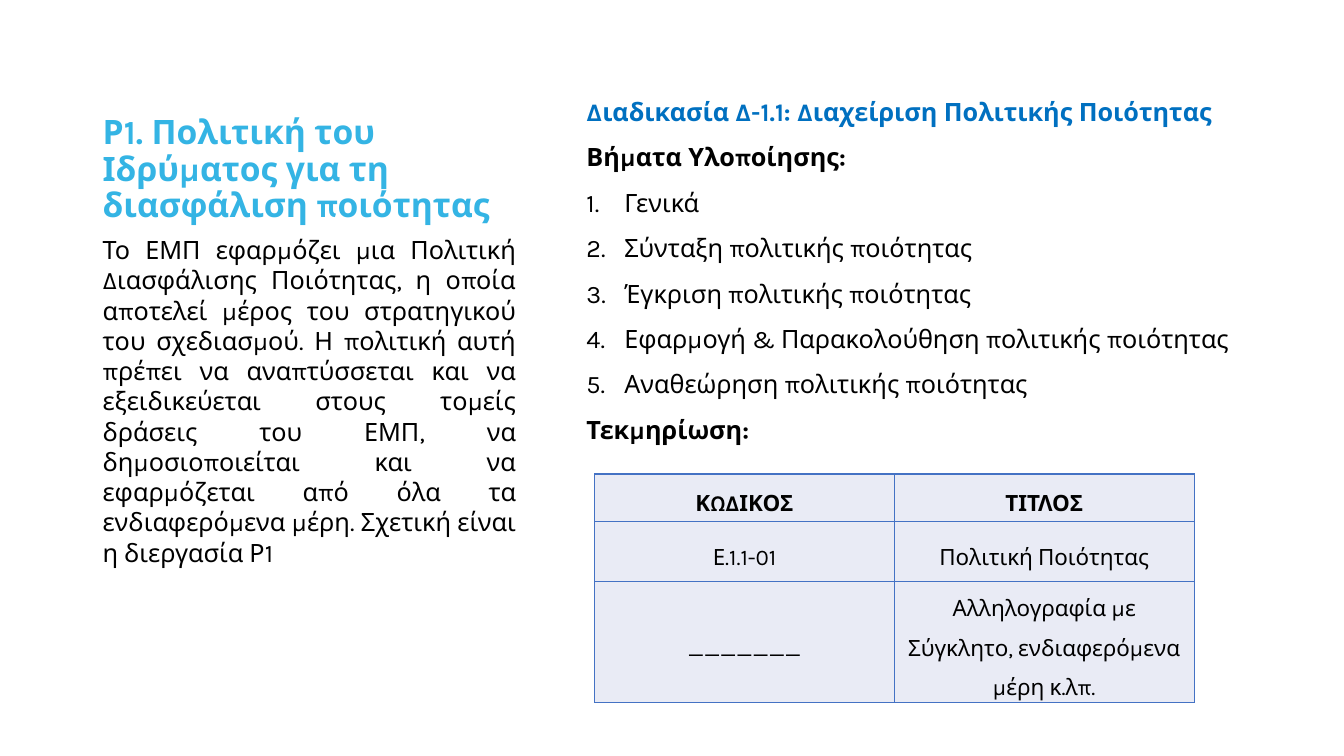
from dataclasses import dataclass
from pptx import Presentation
from pptx.dml.color import RGBColor as RGB
from pptx.enum.text import MSO_ANCHOR as Anchor, PP_ALIGN as Align
from pptx.oxml.ns import qn
from pptx.util import Inches, Pt
from lxml.etree import SubElement as Sub

WIDE, HIGH = 13.33, 7.5


@dataclass(frozen=True)
class Theme:
    font: str = "Karla"
    sky: str = "34B4E4"
    blue: str = "0070C0"
    ink: str = "000000"
    cell: str = "E9EBF5"
    rule: str = "4472C4"
    head: int = 24
    text: int = 18
    small: int = 16
    loose: float = 1.5


LOOK = Theme()

TITLE = "Ρ1. Πολιτική του Ιδρύματος για τη διασφάλιση ποιότητας"
POLICY = (
    "Το ΕΜΠ εφαρμόζει μια Πολιτική Διασφάλισης Ποιότητας, η οποία αποτελεί "
    "μέρος του στρατηγικού του σχεδιασμού. Η πολιτική αυτή πρέπει να "
    "αναπτύσσεται και να εξειδικεύεται στους τομείς δράσεις του ΕΜΠ, να "
    "δημοσιοποιείται και να εφαρμόζεται από όλα τα ενδιαφερόμενα μέρη. "
    "Σχετική είναι η διεργασία Ρ1"
)
PROCESS = "Διαδικασία Δ-1.1: Διαχείριση Πολιτικής Ποιότητας"
STEPS = [
    "Γενικά",
    "Σύνταξη πολιτικής ποιότητας",
    "Έγκριση πολιτικής ποιότητας",
    "Εφαρμογή & Παρακολούθηση πολιτικής ποιότητας",
    "Αναθεώρηση πολιτικής ποιότητας",
]
RECORDS = [
    ("ΚΩΔΙΚΟΣ", "ΤΙΤΛΟΣ"),
    ("Ε.1.1-01", "Πολιτική Ποιότητας"),
    ("_______", "Αλληλογραφία με Σύγκλητο, ενδιαφερόμενα μέρη κ.λπ."),
]


def frame(slide, box, anchor=Anchor.TOP):
    """Add a wrapping text box and return its text frame."""
    area = slide.shapes.add_textbox(*map(Inches, box)).text_frame
    area.word_wrap = True
    area.vertical_anchor = anchor
    return area


def write(para, text, size, color=LOOK.ink, bold=False, align=Align.LEFT, lead=1.0):
    para.alignment = align
    para.line_spacing = lead
    run = para.add_run()
    run.text = text
    font = run.font
    font.name, font.size, font.bold = LOOK.font, Pt(size), bold
    font.color.rgb = RGB.from_string(color)
    for tag in ("a:ea", "a:cs"):
        Sub(run._r.get_or_add_rPr(), qn(tag), typeface=LOOK.font)


def number(para, indent=0.375):
    props = para._p.get_or_add_pPr()
    props.set("marL", str(Inches(indent)))
    props.set("indent", str(-Inches(indent)))
    Sub(props, qn("a:buFont"), typeface="+mj-lt")
    Sub(props, qn("a:buAutoNum"), type="arabicPeriod")


def border(cell):
    props = cell._tc.get_or_add_tcPr()
    for spot, side in enumerate(("a:lnL", "a:lnR", "a:lnT", "a:lnB")):
        line = props.makeelement(qn(side), {"w": str(Pt(1))})
        props.insert(spot, line)
        Sub(Sub(line, qn("a:solidFill")), qn("a:srgbClr"), val=LOOK.rule)


def policy(slide, box):
    """Place the heading above the policy statement."""
    left, top, wide, high = box
    split = high * 0.3
    head = frame(slide, (left, top, wide, split), Anchor.BOTTOM)
    write(head.paragraphs[0], TITLE, LOOK.head, LOOK.sky, bold=True, lead=0.9)
    body = frame(slide, (left, top + split, wide, high - split))
    write(body.paragraphs[0], POLICY, LOOK.text, align=Align.JUSTIFY)


def process(slide, box):
    """List the process name, its numbered steps and the records label."""
    area = frame(slide, box)
    lines = [(PROCESS, LOOK.blue, True), ("Βήματα Υλοποίησης:", LOOK.ink, True)]
    lines += [(step, LOOK.ink, False) for step in STEPS]
    lines.append(("Τεκμηρίωση:", LOOK.ink, True))
    for spot, (text, color, bold) in enumerate(lines):
        para = area.add_paragraph() if spot else area.paragraphs[0]
        if text in STEPS:
            number(para)
        write(para, text, LOOK.text, color, bold, lead=LOOK.loose)


def records(slide, box, highs=(0.47, 0.6, 0.74)):
    shape = slide.shapes.add_table(len(RECORDS), len(RECORDS[0]), *map(Inches, box))
    table = shape.table
    for row, high, texts in zip(table.rows, highs, RECORDS):
        row.height = Inches(high)
        for cell, text in zip(row.cells, texts):
            cell.fill.solid()
            cell.fill.fore_color.rgb = RGB.from_string(LOOK.cell)
            cell.vertical_anchor = Anchor.MIDDLE
            cell.margin_left = cell.margin_right = Inches(0.07)
            cell.margin_top = cell.margin_bottom = 0
            border(cell)
            write(cell.text_frame.paragraphs[0], text, LOOK.small,
                  bold=texts is RECORDS[0], align=Align.CENTER, lead=LOOK.loose)


def main():
    deck = Presentation()
    deck.slide_width, deck.slide_height = Inches(WIDE), Inches(HIGH)
    slide = deck.slides.add_slide(deck.slide_layouts[6])
    edge, mid = WIDE * 0.069, WIDE * 0.429
    policy(slide, (edge, HIGH / 15, WIDE * 0.3225, HIGH * 0.79))
    process(slide, (mid, HIGH * 0.101, WIDE * 0.502, HIGH * 0.55))
    records(slide, (mid + 0.18, HIGH * 0.627, WIDE * 0.446, HIGH * 0.243))
    deck.save("out.pptx")


if __name__ == "__main__":
    main()
